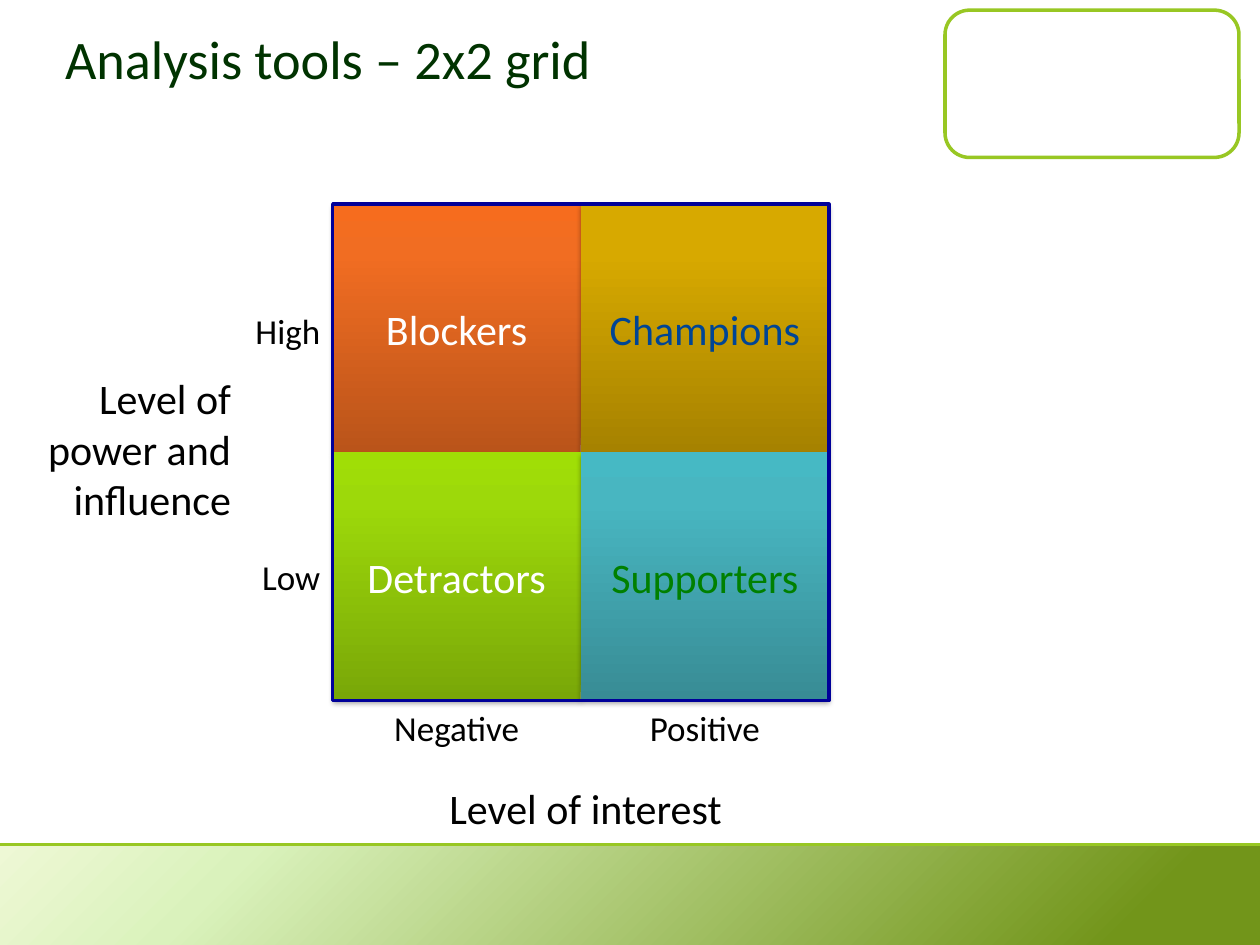
import pptx
import pptx.dml.color
import pptx.enum.shapes
import pptx.enum.text
import pptx.oxml
import pptx.oxml.ns
import pptx.util
from dataclasses import dataclass

Pt = pptx.util.Pt
SHAPES = pptx.enum.shapes.MSO_SHAPE
ALIGN = pptx.enum.text.PP_ALIGN
ANCHOR = pptx.enum.text.MSO_ANCHOR
NAMESPACE = pptx.oxml.ns.nsdecls("a")


@dataclass(frozen=True)
class Theme:
    font: str = "Calibri"
    title_size: int = 31
    large_size: int = 24
    small_size: int = 20
    title: str = "003300"
    text: str = "000000"
    white: str = "FFFFFF"
    accent: str = "98C723"
    grid_line: str = "000099"
    footer: tuple = ((0, "EEF8D5"), (19, "DAF2BC"), (89, "72951A"))


THEME = Theme()
SLIDE_WIDTH, SLIDE_HEIGHT = 720, 540
GRID_LEFT, GRID_TOP, CELL = 190.1, 116.7, 141.8
FOOTER_TOP = 482.6

TITLE = "Analysis tools – 2x2 grid"
QUADRANTS = [
    [("Blockers", "FFFFFF", ("BA541A", "F16D22", "F66C1E")),
     ("Champions", "004594", ("A68200", "D7A900", "D8A900"))],
    [("Detractors", "FFFFFF", ("79A708", "9DD90A", "A0DE06")),
     ("Supporters", "008000", ("388C95", "48B6C1", "46B9C4"))],
]
COLUMN_LABELS = ["Negative", "Positive"]
ROW_LABELS = [("High", 173.5), ("Low", 314)]
AXIS_TITLES = [
    ("Level of power and influence", (8.6, 209.5, 130.5, 94.5), ALIGN.RIGHT),
    ("Level of interest", (241, 443.5, 187.2, 36), ALIGN.CENTER),
]


def rgb(color):
    return pptx.dml.color.RGBColor.from_string(color)


def write(shape, text, size, color, align, anchor):
    text_frame = shape.text_frame
    text_frame.word_wrap = True
    text_frame.vertical_anchor = anchor
    text_frame.text = text
    paragraph = text_frame.paragraphs[0]
    paragraph.alignment = align
    font = paragraph.runs[0].font
    font.name, font.size = THEME.font, Pt(size)
    font.color.rgb = rgb(color)


def add_label(slide, box, text, size, align, color=THEME.text, anchor=ANCHOR.TOP):
    label = slide.shapes.add_textbox(*map(Pt, box))
    write(label, text, size, color, align, anchor)
    return label


def add_box(slide, box, kind=SHAPES.RECTANGLE, fill=None, line=None):
    shape = slide.shapes.add_shape(kind, *map(Pt, box))
    shape.shadow.inherit = False
    if fill:
        shape.fill.solid()
        shape.fill.fore_color.rgb = rgb(fill)
    else:
        shape.fill.background()
    if line:
        shape.line.color.rgb = rgb(line)
        shape.line.width = Pt(2)
    else:
        shape.line.fill.background()
    return shape


def set_gradient(shape, stops, angle):
    shape.fill.gradient()
    stop_xml = "".join(
        f'<a:gs pos="{position * 1000}"><a:srgbClr val="{color}"/></a:gs>'
        for position, color in stops)
    gradient = pptx.oxml.parse_xml(
        f'<a:gradFill {NAMESPACE} rotWithShape="1"><a:gsLst>{stop_xml}</a:gsLst>'
        f'<a:lin ang="{angle * 60000}" scaled="0"/></a:gradFill>')
    properties = shape.element.spPr
    properties.replace(properties.find(pptx.oxml.ns.qn("a:gradFill")), gradient)


def add_shadow(shape):
    effects = shape.element.spPr.find(pptx.oxml.ns.qn("a:effectLst"))
    effects.append(pptx.oxml.parse_xml(
        f'<a:outerShdw {NAMESPACE} blurRad="{Pt(3.1)}" dist="{Pt(1.8)}" '
        'dir="5400000" rotWithShape="0"><a:srgbClr val="000000">'
        '<a:alpha val="35000"/></a:srgbClr></a:outerShdw>'))


def add_frame(slide):
    add_box(slide, (540, 5.8, 168, 84.2), SHAPES.ROUNDED_RECTANGLE,
            THEME.white, THEME.accent)
    footer = add_box(slide, (0, FOOTER_TOP, SLIDE_WIDTH, SLIDE_HEIGHT - FOOTER_TOP))
    set_gradient(footer, THEME.footer, 45)
    rule = slide.shapes.add_connector(
        pptx.enum.shapes.MSO_CONNECTOR.STRAIGHT,
        Pt(0), Pt(FOOTER_TOP), Pt(SLIDE_WIDTH), Pt(FOOTER_TOP))
    rule.line.color.rgb = rgb(THEME.accent)
    rule.line.width = Pt(1.5)
    rule.element.spPr.append(pptx.oxml.parse_xml(f"<a:effectLst {NAMESPACE}/>"))
    add_label(slide, (30.2, 0, 504, 66.2), TITLE, THEME.title_size,
              ALIGN.LEFT, THEME.title, ANCHOR.MIDDLE)


def add_grid(slide):
    for row, quadrants in enumerate(QUADRANTS):
        for column, (name, color, shades) in enumerate(quadrants):
            quadrant = add_box(slide, (GRID_LEFT + column * CELL,
                                       GRID_TOP + row * CELL, CELL, CELL))
            set_gradient(quadrant, zip((0, 80, 100), shades), 270)
            add_shadow(quadrant)
            write(quadrant, name, THEME.large_size, color,
                  ALIGN.CENTER, ANCHOR.MIDDLE)
    add_box(slide, (GRID_LEFT, GRID_TOP, 2 * CELL, 2 * CELL), line=THEME.grid_line)


def add_axes(slide):
    for column, text in enumerate(COLUMN_LABELS):
        box = (GRID_LEFT + column * CELL, GRID_TOP + 2 * CELL, CELL, 31.5)
        add_label(slide, box, text, THEME.small_size, ALIGN.CENTER)
    for text, top in ROW_LABELS:
        add_label(slide, (GRID_LEFT - 68, top, 68, 31.5), text,
                  THEME.small_size, ALIGN.RIGHT)
    for text, box, align in AXIS_TITLES:
        add_label(slide, box, text, THEME.large_size, align)


def main():
    presentation = pptx.Presentation()
    presentation.slide_width = Pt(SLIDE_WIDTH)
    presentation.slide_height = Pt(SLIDE_HEIGHT)
    slide = presentation.slides.add_slide(presentation.slide_layouts[6])
    add_frame(slide)
    add_grid(slide)
    add_axes(slide)
    presentation.save("out.pptx")


if __name__ == "__main__":
    main()
